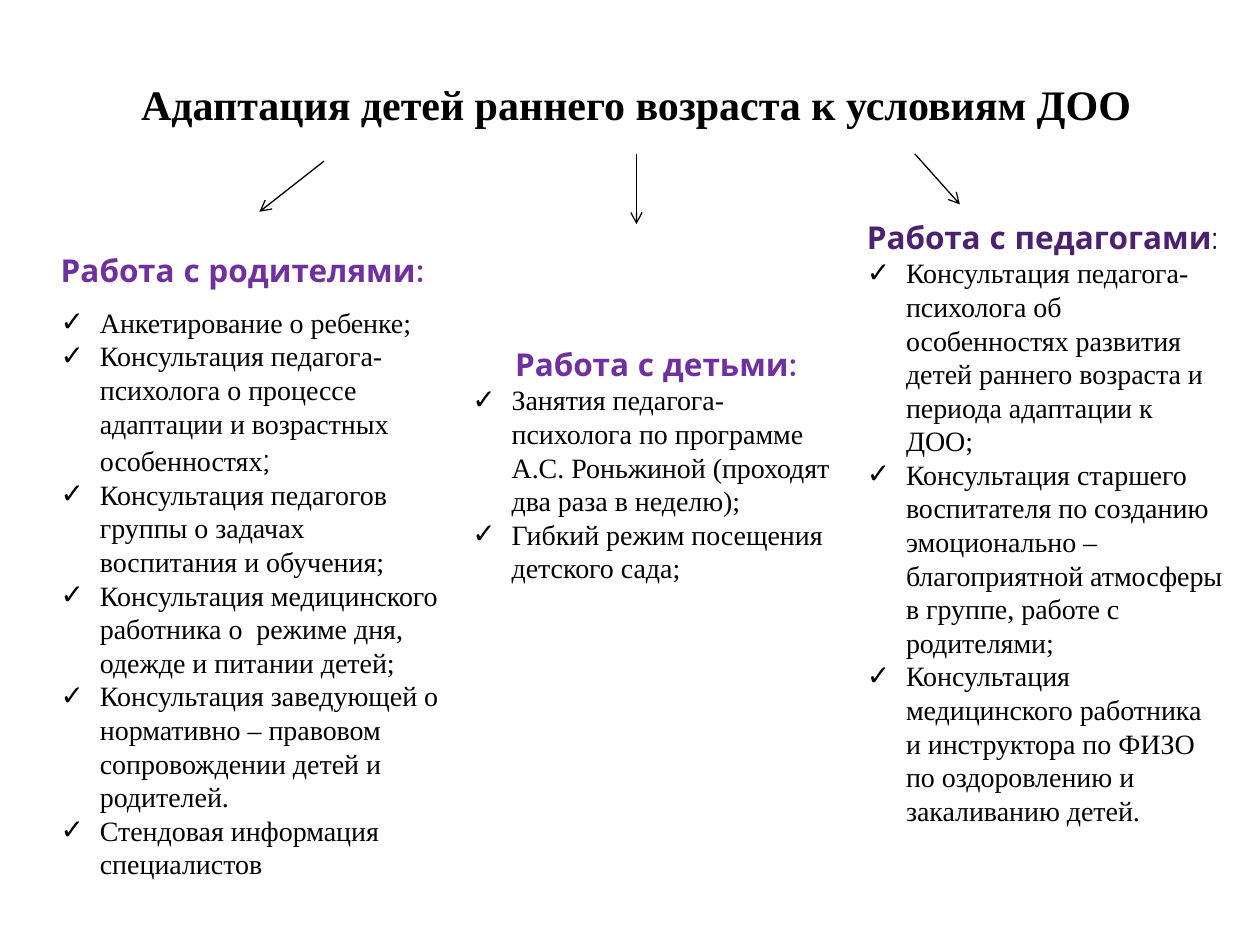
from lxml import etree
from pptx import Presentation
from pptx.dml.color import RGBColor
from pptx.enum.shapes import MSO_CONNECTOR
from pptx.enum.text import MSO_ANCHOR, MSO_AUTO_SIZE, PP_ALIGN
from pptx.oxml.ns import qn
from pptx.util import Cm, Pt

LEFT, CENTER = PP_ALIGN.LEFT, PP_ALIGN.CENTER
TOP, NO_FIT = MSO_ANCHOR.TOP, MSO_AUTO_SIZE.NONE
STRAIGHT = MSO_CONNECTOR.STRAIGHT

COLORS = {"text": "000000", "violet": "7030A0", "plum": "4C216D"}
HEADING_FONT, TEXT_FONT = "Quicksand", "Times New Roman"


def set_font(font, name, size, color, bold=False):
    font.name, font.size, font.bold = name, Pt(size), bold
    font.color.rgb = RGBColor.from_string(COLORS[color])


def place(shape, left, top, width, height):
    shape.left, shape.top, shape.width, shape.height = map(Cm, (left, top, width, height))
    frame = shape.text_frame
    frame.word_wrap, frame.auto_size, frame.vertical_anchor = True, NO_FIT, TOP
    return frame


presentation = Presentation()
presentation.slide_width, presentation.slide_height = Cm(25.4), Cm(19.05)
slide = presentation.slides.add_slide(presentation.slide_layouts.get_by_name("Comparison"))
bodies = {shape.placeholder_format.idx: shape for shape in slide.placeholders}

# Title
frame = place(slide.shapes.title, 1.52, 1.45, 22.61, 2.31)
frame.text = "Адаптация детей раннего возраста к условиям ДОО"
paragraph = frame.paragraphs[0]
paragraph.alignment = CENTER
set_font(paragraph.font, TEXT_FONT, 24, "text", True)

# Arrows from the title to the columns
for points in [(6.53, 3.25, 5.23, 4.27), (18.44, 3.1, 19.35, 4.12), (12.83, 3.1, 12.83, 4.52)]:
    arrow = slide.shapes.add_connector(STRAIGHT, *map(Cm, points))
    arrow.line.color.rgb = RGBColor.from_string(COLORS["text"])
    arrow.line.width = Pt(0.75)
    etree.SubElement(arrow.line._get_or_add_ln(), qn("a:tailEnd"), type="arrow")
    etree.SubElement(arrow._element.spPr, qn("a:effectLst"))

# Columns: placeholder, box, heading, heading color, alignment, gap below, items
columns = [
    (2, (0.97, 4.93, 8.2, 13.84), "Работа с родителями:", "violet", LEFT, 9.5, [
        "Анкетирование о ребенке;",
        "Консультация педагога-психолога о процессе адаптации и возрастных особенностях",
        "Консультация педагогов группы о задачах воспитания и обучения;",
        "Консультация медицинского работника о  режиме дня, одежде и питании детей;",
        "Консультация заведующей о нормативно – правовом сопровождении детей и родителей.",
        "Стендовая информация специалистов",
    ]),
    (1, (9.27, 6.83, 7.92, 5.13), "Работа с детьми:", "violet", CENTER, 0, [
        "Занятия педагога-психолога по программе А.С. Роньжиной (проходят два раза в неделю);",
        "Гибкий режим посещения детского сада;",
    ]),
    (4, (17.22, 4.27, 7.7, 12.65), "Работа с педагогами", "plum", LEFT, 0, [
        "Консультация педагога-психолога об особенностях развития детей раннего возраста "
        "и периода адаптации к ДОО;",
        "Консультация старшего воспитателя по созданию эмоционально – благоприятной "
        "атмосферы в группе, работе с родителями;",
        "Консультация медицинского работника и инструктора по ФИЗО по оздоровлению "
        "и закаливанию детей.",
    ]),
]
for index, box, heading, color, alignment, gap, items in columns:
    frame = place(bodies[index], *box)
    frame.text = "\n".join([heading] + items)
    for number, paragraph in enumerate(frame.paragraphs):
        properties = paragraph._p.get_or_add_pPr()
        paragraph.space_before = Pt(0)
        if number == 0:
            paragraph.alignment = alignment
            paragraph.space_after = Pt(gap)
            properties.set("marL", "0")
            properties.set("indent", "0")
            etree.SubElement(properties, qn("a:buNone"))
            set_font(paragraph.font, HEADING_FONT, 18, color, True)
        else:
            paragraph.alignment = LEFT
            properties.set("marL", str(Cm(0.79)))
            properties.set("indent", str(-Cm(0.79)))
            etree.SubElement(properties, qn("a:buChar"), char="✓")
            set_font(paragraph.font, TEXT_FONT, 16, "text")

# Punctuation set in the heading font
for index, number, mark in [(2, 2, ";"), (4, 0, ":")]:
    run = bodies[index].text_frame.paragraphs[number].add_run()
    run.text = mark
    set_font(run.font, HEADING_FONT, 18, "text")

# The fourth body of the layout is not needed
bodies[3]._element.getparent().remove(bodies[3]._element)

presentation.save("out.pptx")
